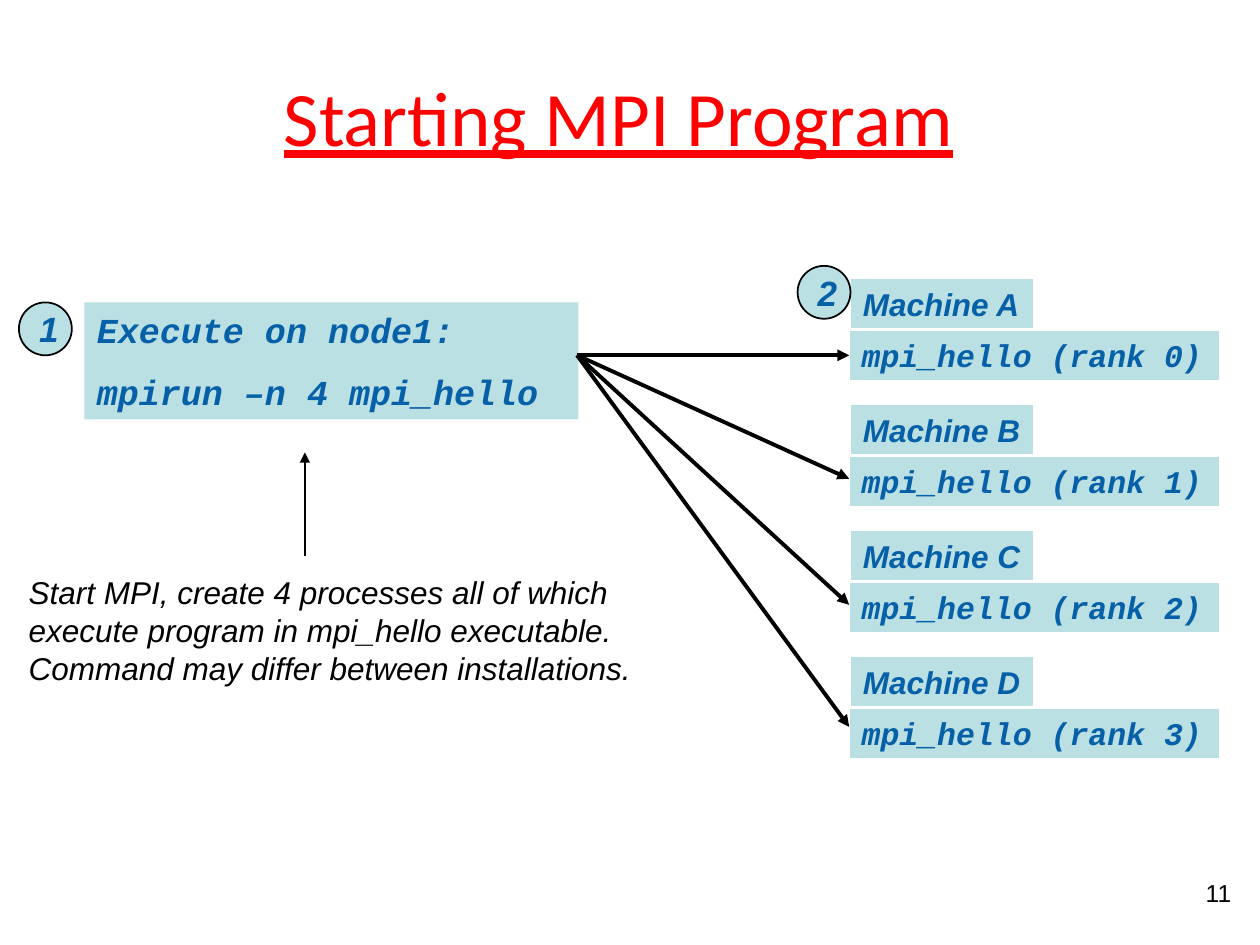
import pptx
import pptx.util
import pptx.dml.color
import pptx.enum.shapes
import pptx.enum.text
import pptx.oxml.ns
from lxml import etree

Inches, Pt = pptx.util.Inches, pptx.util.Pt
Color = pptx.dml.color.RGBColor
Shape = pptx.enum.shapes.MSO_SHAPE
Align = pptx.enum.text.PP_ALIGN
Anchor = pptx.enum.text.MSO_ANCHOR

PALE = Color(0xBB, 0xE0, 0xE3)
BLUE = Color(0x06, 0x60, 0xA8)
RED = Color(0xFF, 0x00, 0x00)
BLACK = Color(0x00, 0x00, 0x00)
WHITE = Color(0xFF, 0xFF, 0xFF)

deck = pptx.Presentation()
deck.slide_width, deck.slide_height = Inches(10), Inches(7.5)
slide = deck.slides.add_slide(deck.slide_layouts[6])


def add_text(text, left, top, width, height, shape=None, line=None, size=18,
             font="Arial", color=BLACK, bold=False, italic=False, under=False,
             align=Align.LEFT, anchor=Anchor.TOP, wrap=True, gap=0, inset=None):
    """Add a text box, or a pale filled shape when a shape kind is given."""
    place = [Inches(n) for n in (left, top, width, height)]
    if shape is None:
        box = slide.shapes.add_textbox(*place)
    else:
        box = slide.shapes.add_shape(shape, *place)
        box.shadow.inherit = False
        box.fill.solid()
        box.fill.fore_color.rgb = PALE
        if line is None:
            box.line.fill.background()
        else:
            box.line.color.rgb = line
            box.line.width = Pt(1)
    frame = box.text_frame
    frame.word_wrap = wrap
    frame.vertical_anchor = anchor
    if inset is not None:
        frame.margin_left = frame.margin_right = Inches(inset)
        frame.margin_top = frame.margin_bottom = Inches(inset)
    frame.text = text
    for i, para in enumerate(frame.paragraphs):
        para.alignment = align
        para.space_before = Pt(gap if i else 0)
        face = para.runs[0].font
        face.name, face.size, face.color.rgb = font, Pt(size), color
        face.bold, face.italic, face.underline = bold, italic, under


def add_arrow(start, end, width):
    arrow = slide.shapes.add_connector(
        pptx.enum.shapes.MSO_CONNECTOR.STRAIGHT,
        *[Inches(n) for n in start + end])
    arrow.line.color.rgb = BLACK
    arrow.line.width = Pt(width)
    name = pptx.oxml.ns.qn
    etree.SubElement(arrow.line._get_or_add_ln(), name("a:tailEnd"), type="triangle")
    etree.SubElement(arrow._element.spPr, name("a:effectLst"))


label = dict(color=BLUE, bold=True, italic=True)
badge = dict(label, shape=Shape.OVAL, line=BLACK, size=20,
             anchor=Anchor.MIDDLE, wrap=False)
panel = dict(label, shape=Shape.RECTANGLE, line=WHITE)

add_text("Starting MPI Program", 0.25, 0.45, 9.32, 0.84, size=44, font="Calibri",
         color=RED, under=True, align=Align.CENTER, inset=0.1)

# Step 1: the command and its note
add_text("Execute on node1:\nmpirun –n 4 mpi_hello", 0.67, 2.4, 3.92, 0.93,
         shape=Shape.RECTANGLE, size=20, font="Courier New", gap=11.5, **label)
add_text("1", 0.15, 2.4, 0.42, 0.42, **badge)
add_arrow((2.42, 4.41), (2.42, 3.59), 0.75)
add_text("Start MPI, create 4 processes all of which execute program in "
         "mpi_hello executable.\nCommand may differ between installations.",
         0.13, 4.5, 5.1, 1.01, italic=True)

# Step 2: one process on each machine
for rank, name in enumerate("ABCD"):
    top = 2.21 + rank
    add_text(f"Machine {name}", 6.75, top, 1.46, 0.4, wrap=False, **panel)
    add_text(f"mpi_hello (rank {rank})", 6.74, top + 0.41, 2.94, 0.4,
             font="Courier New", **panel)
for end in (2.82, 3.8, 4.8, 5.77):
    add_arrow((4.58, 2.82), (6.74, end), 2.25)
add_text("2", 6.33, 2.11, 0.42, 0.42, **badge)

add_text("11", 9.27, 6.8, 0.6, 0.57, size=14, align=Align.RIGHT,
         anchor=Anchor.MIDDLE, inset=0.1)

deck.save("out.pptx")
